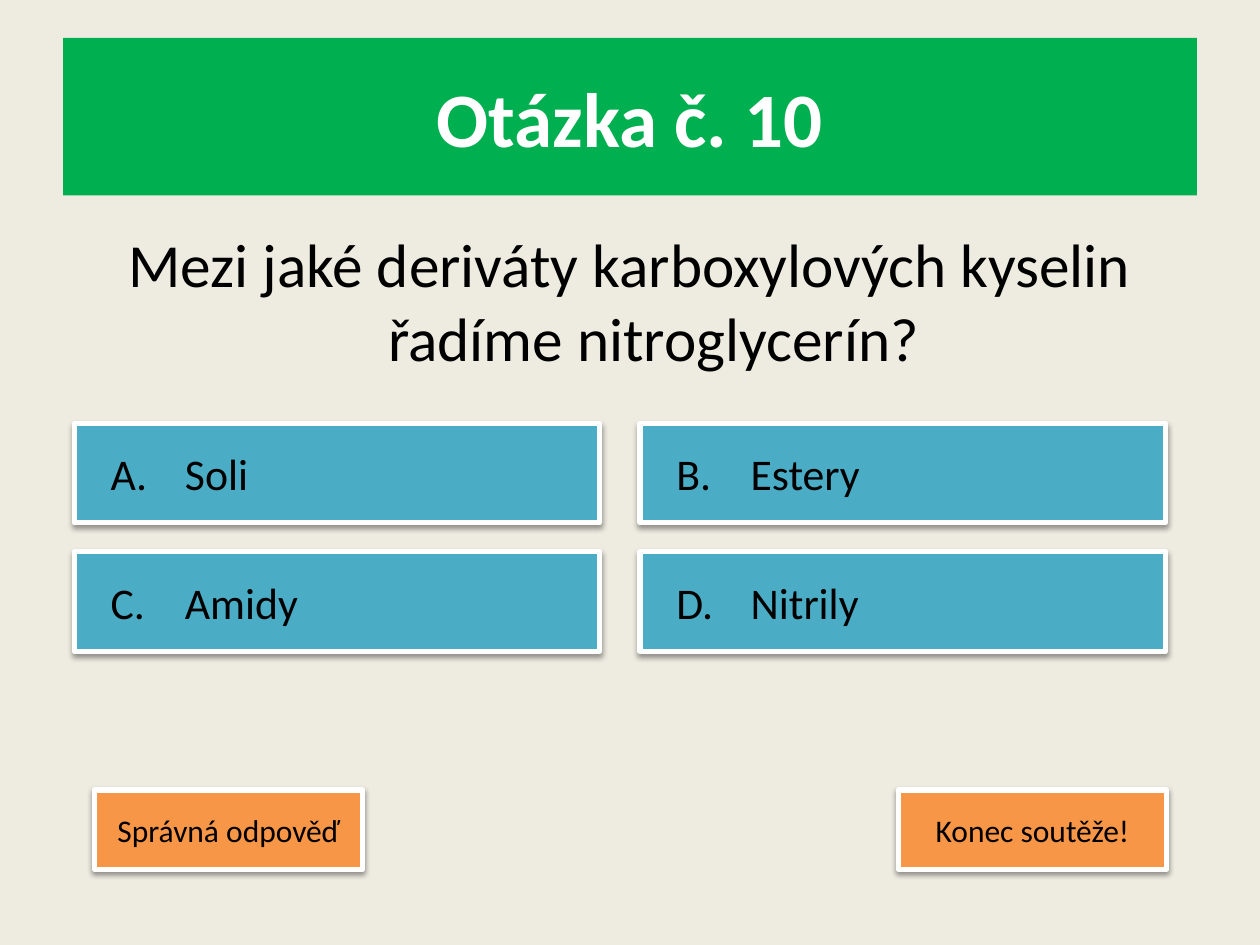
from lxml import etree
from pptx import Presentation
from pptx import util as u
from pptx.dml.color import RGBColor
from pptx.enum import shapes, text
from pptx.oxml import parse_xml
from pptx.oxml.ns import nsdecls, qn

COLORS = {
    "background": "EEECE1", "banner": "00B050", "answer": "4BACC6",
    "button": "F79646", "light": "FFFFFF", "dark": "000000",
}
SHADOW = (
    f'<a:effectLst {nsdecls("a")}><a:outerShdw blurRad="{u.Pt(3.1)}" dist="{u.Pt(1.6)}" '
    f'dir="5400000" rotWithShape="0"><a:srgbClr val="{COLORS["dark"]}">'
    '<a:alpha val="38000"/></a:srgbClr></a:outerShdw></a:effectLst>'
)


def write(box, words, align, **font_format):
    """Put one paragraph into the box and return it."""
    frame = box.text_frame
    frame.word_wrap = True
    para = frame.paragraphs[0]
    para.alignment = align
    span = para.add_run()
    span.text = words
    color = font_format.pop("color", "dark")
    for name, value in {"name": "Calibri", **font_format}.items():
        setattr(span.font, name, value)
    span.font.color.rgb = RGBColor.from_string(COLORS[color])
    return para


def add_tile(left, top, width, height, color):
    """Add a filled rectangle with a white outline and a soft shadow."""
    tile = page.shapes.add_shape(
        shapes.MSO_SHAPE.RECTANGLE, *map(u.Inches, (left, top, width, height)))
    tile.fill.solid()
    tile.fill.fore_color.rgb = RGBColor.from_string(COLORS[color])
    tile.line.color.rgb = RGBColor.from_string(COLORS["light"])
    tile.line.width = u.Pt(3)
    tile._element.spPr.append(parse_xml(SHADOW))
    tile.text_frame.vertical_anchor = text.MSO_ANCHOR.MIDDLE
    return tile


deck = Presentation()
deck.slide_width, deck.slide_height = u.Inches(10), u.Inches(7.5)
page = deck.slides.add_slide(deck.slide_layouts[5])
page.background.fill.solid()
page.background.fill.fore_color.rgb = RGBColor.from_string(COLORS["background"])

# Title banner
title = page.shapes.title
for side, value in {"left": 0.5, "top": 0.3, "width": 9, "height": 1.25}.items():
    setattr(title, side, u.Inches(value))
title.fill.solid()
title.fill.fore_color.rgb = RGBColor.from_string(COLORS["banner"])
title.text_frame.vertical_anchor = text.MSO_ANCHOR.MIDDLE
write(title, "Otázka č. 10", text.PP_ALIGN.CENTER,
      size=u.Pt(44), bold=True, color="light")

# Question with a hanging indent
question = page.shapes.add_textbox(*map(u.Inches, (0.5, 1.75, 9, 1.92)))
para = write(question, "Mezi jaké deriváty karboxylových kyselin řadíme nitroglycerín?",
             text.PP_ALIGN.CENTER, size=u.Pt(35))
properties = para._p.get_or_add_pPr()
properties.set("marL", str(u.Inches(0.38)))
properties.set("indent", str(u.Inches(-0.38)))
before = etree.SubElement(properties, qn("a:spcBef"))
etree.SubElement(before, qn("a:spcPct")).set("val", "20000")

# Answers in a two by two grid
for index, answer in enumerate(["Soli", "Estery", "Amidy", "Nitrily"]):
    row, column = divmod(index, 2)
    tile = add_tile(0.59 + 4.49 * column, 3.36 + 1.02 * row, 4.17, 0.79, "answer")
    para = write(tile, f"\t{'ABCD'[index]}.\t{answer}", text.PP_ALIGN.LEFT, size=u.Pt(25))
    tabs = etree.SubElement(para._p.get_or_add_pPr(), qn("a:tabLst"))
    for position in (0.19, 0.78):
        tab = etree.SubElement(tabs, qn("a:tab"))
        tab.set("pos", str(u.Inches(position)))
        tab.set("algn", "l")

# Buttons
for left, label in ((0.75, "Správná odpověď"), (7.13, "Konec soutěže!")):
    button = add_tile(left, 6.27, 2.13, 0.63, "button")
    write(button, label, text.PP_ALIGN.CENTER, size=u.Pt(18))

deck.save("out.pptx")
